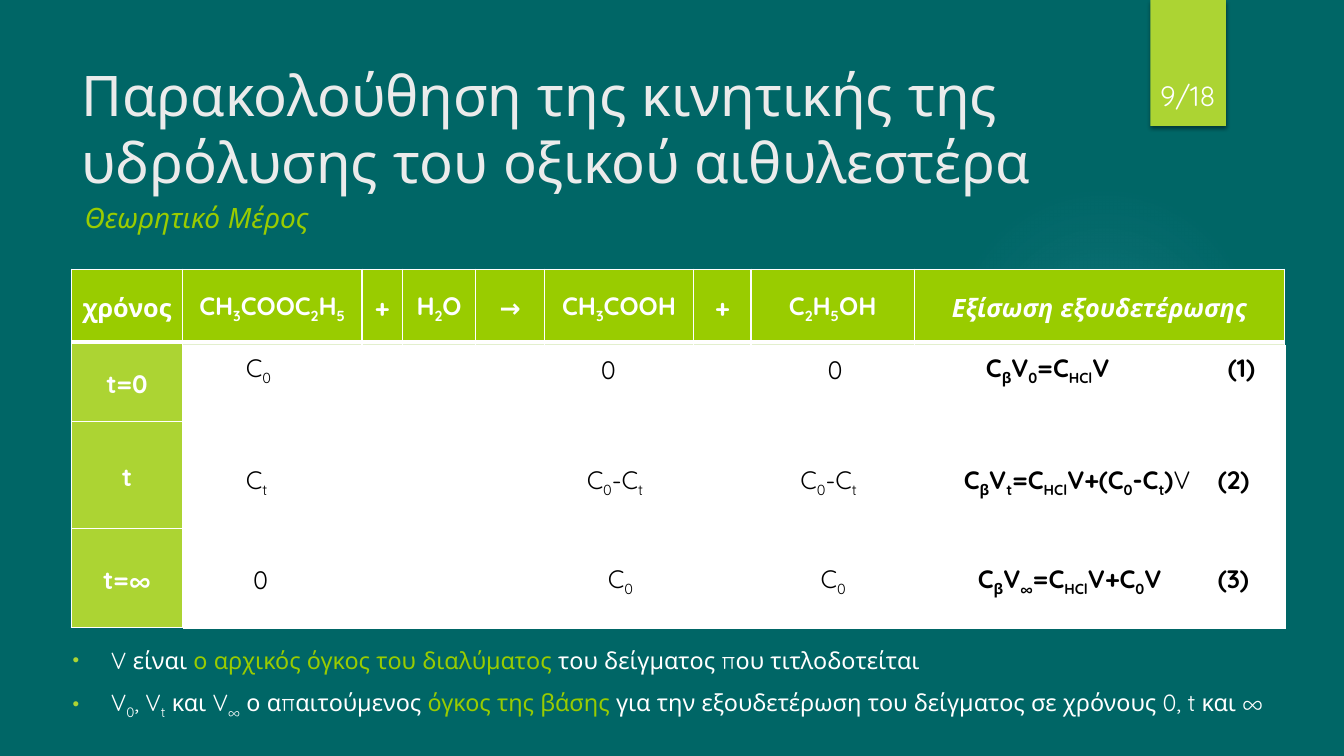
from dataclasses import dataclass

from lxml.etree import SubElement
from pptx import Presentation
from pptx.dml.color import RGBColor
from pptx.enum.shapes import MSO_SHAPE
from pptx.enum.text import MSO_ANCHOR, MSO_AUTO_SIZE, PP_ALIGN
from pptx.oxml import parse_xml
from pptx.oxml.ns import nsdecls, qn
from pptx.util import Inches, Pt


@dataclass(frozen=True)
class Theme:
    font: str = "Quicksand"
    background: str = "006666"
    accent: str = "99CC00"
    ribbon: str = "ACD433"
    glow: str = "7AC4F0"
    title: str = "EBEBEB"
    white: str = "FFFFFF"
    black: str = "000000"
    bands: tuple = ("E3EFCE", "F1F7E8")
    title_size: float = 40
    label_size: float = 20
    table_size: float = 18
    body_size: float = 16.7


THEME = Theme()

COLUMNS = [1.1, 1.78, 0.4, 0.73, 0.68, 1.48, 0.57, 1.62, 3.67]
ROWS = [0.72, 0.79, 1.06, 0.99]
HEADER = ["χρόνος", "CH~3~COOC~2~H~5", "+", "H~2~O", "→", "CH~3~COOH", "+",
          "C~2~H~5~OH", "Εξίσωση εξουδετέρωσης"]
TIMES = ["t=0", "t", "t=∞"]
CONCENTRATIONS = [
    {0: (0.62, "C~0"), 4: (0.55, "0"), 6: (0.75, "0")},
    {0: (0.62, "C~t"), 4: (0.41, "C~0~-C~t"), 6: (0.48, "C~0~-C~t")},
    {0: (0.69, "0"), 4: (0.62, "C~0"), 6: (0.68, "C~0")},
]
EQUATIONS = [
    (0.70, 3.10, [("C~β~V~0~=C~HCl~V", True), ("\t(1)", True)]),
    (0.48, 3.00, [("C~β~V~t~=C~HCl~V+(C~0~-C~t~)", True), ("V", False), ("\t(2)", True)]),
    (0.62, 3.00, [("C~β~V~∞~=C~HCl~V+C~0~V", True), ("\t(3)", True)]),
]
STRIPS = [(3.43, [0.43, 0.43]), (4.27, [0.97]), (5.24, [0.99])]
NOTES = [
    [("V είναι ", THEME.white), ("ο αρχικός όγκος του διαλύματος ", THEME.accent),
     ("του δείγματος που τιτλοδοτείται", THEME.white)],
    [("V~0~, V~t~ και V~∞~ ο απαιτούμενος ", THEME.white),
     ("όγκος της βάσης ", THEME.accent),
     ("για την εξουδετέρωση του δείγματος σε χρόνους 0, t και ∞", THEME.white)],
]


def add_text(para, text, size, color, bold=False, italic=False):
    for index, part in enumerate(text.split("~")):
        if not part:
            continue
        span = para.add_run()
        span.text = part
        span.font.name = THEME.font
        span.font.size = Pt(size)
        span.font.bold = bold
        span.font.italic = italic
        span.font.color.rgb = RGBColor.from_string(color)
        if index % 2:
            span.font._element.set("baseline", "-25000")


def place(shape, box):
    shape.left, shape.top, shape.width, shape.height = map(Inches, box)


def add_plain_shape(page, kind, box, color):
    shape = page.shapes.add_shape(kind, *map(Inches, box))
    shape.shadow.inherit = False
    shape.fill.solid()
    shape.fill.fore_color.rgb = RGBColor.from_string(color)
    shape.line.fill.background()
    return shape


def draw_glow(page, box):
    glow = add_plain_shape(page, MSO_SHAPE.OVAL, box, THEME.glow)
    stops = "".join(
        f'<a:gs pos="{position * 1000}"><a:srgbClr val="{THEME.glow}">'
        f'<a:alpha val="{opacity * 1000}"/></a:srgbClr></a:gs>'
        for position, opacity in [(0, 7), (36, 6), (69, 0), (100, 0)])
    gradient = parse_xml(
        f'<a:gradFill {nsdecls("a")} rotWithShape="1"><a:gsLst>{stops}</a:gsLst>'
        '<a:path path="circle"><a:fillToRect l="50000" t="50000" r="50000" b="50000"/>'
        '</a:path></a:gradFill>')
    properties = glow._element.spPr
    properties.replace(properties.find(qn("a:solidFill")), gradient)


def draw_page_number(page, box, text):
    left, top, width, height = box
    ribbon = add_plain_shape(page, MSO_SHAPE.RECTANGLE, box, THEME.ribbon)
    effects = ribbon._element.spPr.find(qn("a:effectLst"))
    effects.append(parse_xml(
        f'<a:outerShdw {nsdecls("a")} blurRad="{Pt(3)}" dist="{Pt(2)}" dir="5400000" '
        f'rotWithShape="0"><a:srgbClr val="{THEME.black}"><a:alpha val="45000"/>'
        '</a:srgbClr></a:outerShdw>'))
    label = page.shapes.add_textbox(*map(Inches, (left - 0.09, top + 0.32, width + 0.17, 0.84)))
    frame = label.text_frame
    frame.word_wrap = True
    frame.vertical_anchor = MSO_ANCHOR.BOTTOM
    para = frame.paragraphs[0]
    para.alignment = PP_ALIGN.CENTER
    add_text(para, text, THEME.label_size, THEME.white)


def fill_title(page, box, text):
    title = page.shapes.title
    place(title, box)
    frame = title.text_frame
    frame.auto_size = MSO_AUTO_SIZE.NONE
    frame.vertical_anchor = MSO_ANCHOR.MIDDLE
    para = frame.paragraphs[0]
    para.alignment = PP_ALIGN.LEFT
    para.line_spacing = 1.0
    add_text(para, text, THEME.title_size, THEME.title)


def draw_subtitle(page, box, text):
    frame = page.shapes.add_textbox(*map(Inches, box)).text_frame
    frame.word_wrap = True
    add_text(frame.paragraphs[0], text, THEME.label_size, THEME.accent, italic=True)


def add_grid(page, left, top, widths, heights):
    box = (left, top, sum(widths), sum(heights))
    table = page.shapes.add_table(len(heights), len(widths), *map(Inches, box)).table
    table.first_row = table.horz_banding = False
    for column, width in zip(table.columns, widths):
        column.width = Inches(width)
    for row, height in zip(table.rows, heights):
        row.height = Inches(height)
    return table


def style_cell(cell, color, top=1, bottom=1):
    properties = cell._tc.get_or_add_tcPr()
    for side, width in (("L", 1), ("R", 1), ("T", top), ("B", bottom)):
        properties.append(parse_xml(
            f'<a:ln{side} {nsdecls("a")} w="{Pt(width)}"><a:solidFill>'
            f'<a:srgbClr val="{THEME.white}"/></a:solidFill></a:ln{side}>'))
    cell.fill.solid()
    cell.fill.fore_color.rgb = RGBColor.from_string(color)
    cell.vertical_anchor = MSO_ANCHOR.MIDDLE
    cell.margin_left = cell.margin_right = Inches(0.07)
    cell.margin_top = cell.margin_bottom = 0
    para = cell.text_frame.paragraphs[0]
    para.line_spacing = 1.15
    return para


def write_label(cell, text, color, italic=False, **borders):
    para = style_cell(cell, color, **borders)
    para.alignment = PP_ALIGN.CENTER
    add_text(para, text, THEME.table_size, THEME.white, bold=True, italic=italic)


def draw_frame_table(page, left, top):
    table = add_grid(page, left, top, COLUMNS, ROWS)
    for column, text in enumerate(HEADER):
        write_label(table.cell(0, column), text, THEME.accent,
                    italic=column == len(HEADER) - 1, bottom=3)
    for row, time in enumerate(TIMES):
        border = 1 if row else 3
        write_label(table.cell(row + 1, 0), time, THEME.ribbon, top=border)
        for column in range(1, len(COLUMNS)):
            style_cell(table.cell(row + 1, column), THEME.bands[row % 2], top=border)


def draw_strip(page, left, top, heights, concentrations, equation):
    widths = COLUMNS[1:]
    table = add_grid(page, left, top, widths, heights)
    indent, number_at, parts = equation
    entries = {column: (inset, [(text, False)])
               for column, (inset, text) in concentrations.items()}
    entries[len(widths) - 1] = (indent, parts)
    for cell in table.iter_cells():
        style_cell(cell, THEME.white)
    for column, (inset, spans) in entries.items():
        cell = table.cell(0, column)
        cell.margin_left = Inches(inset)
        para = cell.text_frame.paragraphs[0]
        if spans is parts:
            tabs = SubElement(para._p.get_or_add_pPr(), qn("a:tabLst"))
            SubElement(tabs, qn("a:tab"), pos=str(Inches(number_at - indent)), algn="l")
        for text, bold in spans:
            add_text(para, text, THEME.table_size, THEME.black, bold=bold)


def fill_notes(page, box, notes):
    body = page.placeholders[1]
    place(body, box)
    frame = body.text_frame
    frame.auto_size = MSO_AUTO_SIZE.NONE
    for index, parts in enumerate(notes):
        para = frame.add_paragraph() if index else frame.paragraphs[0]
        para.space_before = Pt(10 if index else 0)
        properties = para._p.get_or_add_pPr()
        properties.set("marL", str(Inches(0.38)))
        properties.set("indent", str(Inches(-0.38)))
        bullet_color = SubElement(properties, qn("a:buClr"))
        SubElement(bullet_color, qn("a:srgbClr"), val=THEME.ribbon)
        SubElement(properties, qn("a:buSzPct"), val="80000")
        SubElement(properties, qn("a:buChar"), char="•")
        for text, color in parts:
            add_text(para, text, THEME.body_size, color)


def main():
    deck = Presentation()
    deck.slide_width, deck.slide_height = Inches(13.33), Inches(7.5)
    page = deck.slides.add_slide(deck.slide_layouts[1])
    page.background.fill.solid()
    page.background.fill.fore_color.rgb = RGBColor.from_string(THEME.background)
    draw_glow(page, (9.41, 1.83, 3.08, 3.08))
    draw_page_number(page, (11.41, 0, 0.75, 1.25), "9/18")
    fill_title(page, (0.71, 0.5, 10.29, 1.53),
               "Παρακολούθηση της κινητικής της υδρόλυσης του οξικού αιθυλεστέρα")
    draw_subtitle(page, (0.74, 1.94, 11.78, 0.5), "Θεωρητικό Μέρος")
    draw_frame_table(page, 0.71, 2.67)
    for (top, heights), concentrations, equation in zip(STRIPS, CONCENTRATIONS, EQUATIONS):
        draw_strip(page, 1.82, top, heights, concentrations, equation)
    fill_notes(page, (0.62, 6.36, 12.43, 0.98), NOTES)
    deck.save("out.pptx")


if __name__ == "__main__":
    main()
